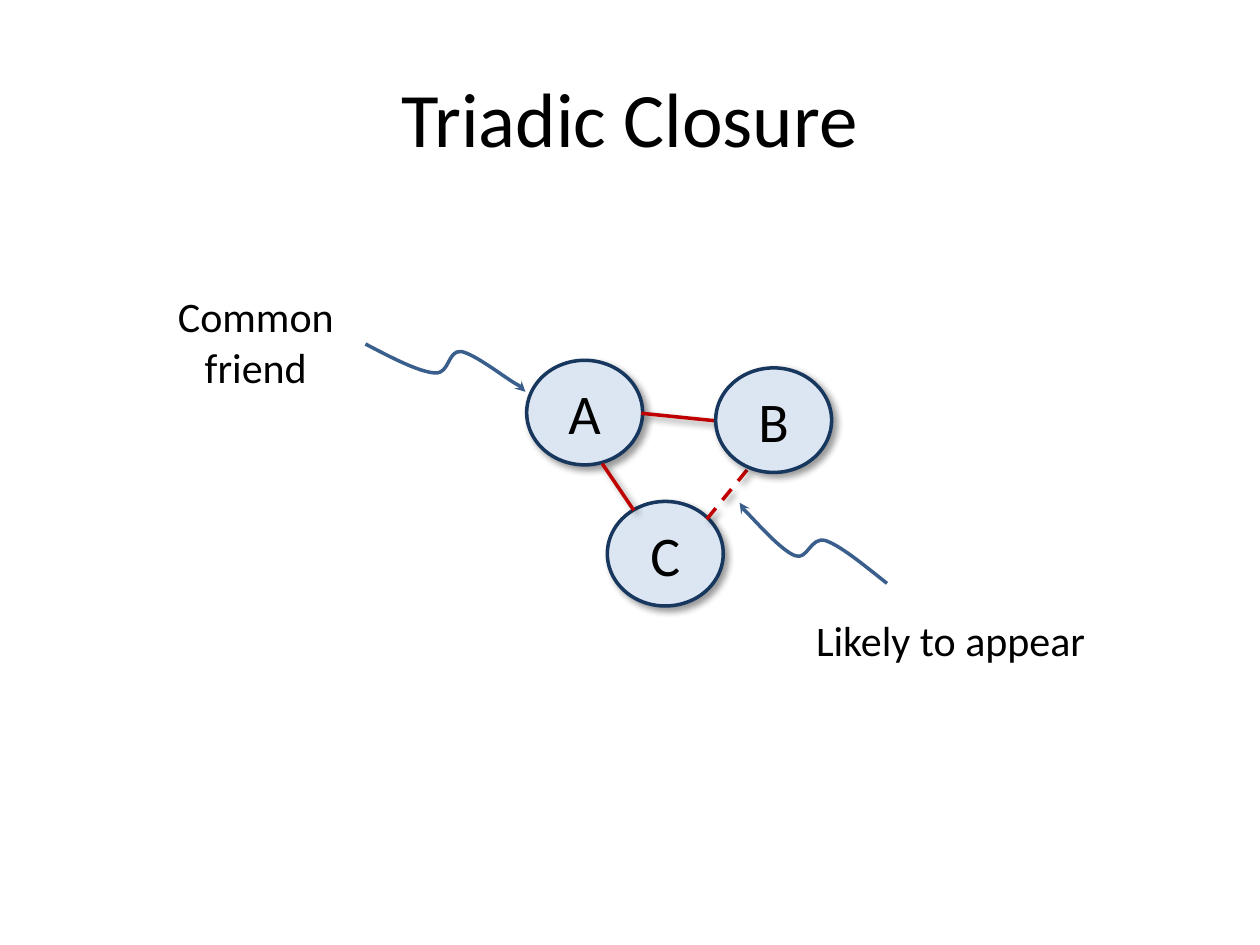
import pptx
import pptx.dml.color
import pptx.enum.dml
import pptx.enum.shapes
import pptx.enum.text
import pptx.oxml
import pptx.oxml.ns
import pptx.util

Inches = pptx.util.Inches
qn = pptx.oxml.ns.qn

SHADE = (
    '<a:effectLst xmlns:a="http://schemas.openxmlformats.org/drawingml/2006/main">'
    '<a:outerShdw blurRad="50800" dist="38100" dir="2700000" algn="tl" rotWithShape="0">'
    '<a:srgbClr val="000000"><a:alpha val="40000"/></a:srgbClr>'
    '</a:outerShdw></a:effectLst>'
)


def tint(code):
    return pptx.dml.color.RGBColor.from_string(code)


class Sketch:
    """Draws labels, nodes, edges and curved arrows on one slide in one style."""

    font, ink, fill, rim = "Calibri", "000000", "DCE6F2", "17375E"
    edge, curl, width = "C00000", "3A5F8C", pptx.util.Pt(2)
    node = (0.92, 0.83)

    def __init__(self, slide):
        self.shapes = slide.shapes

    def letter(self, frame, text, size, middle=True):
        anchor = pptx.enum.text.MSO_ANCHOR
        frame.word_wrap = True
        frame.vertical_anchor = anchor.MIDDLE if middle else anchor.TOP
        para = frame.paragraphs[0]
        para.alignment = pptx.enum.text.PP_ALIGN.CENTER
        for index, part in enumerate(text.split("\n")):
            if index:
                para.add_line_break()
            run = para.add_run()
            run.text = part
            run.font.name = self.font
            run.font.size = pptx.util.Pt(size)
            run.font.color.rgb = tint(self.ink)

    def stroke(self, shape, color):
        shape.line.color.rgb = tint(color)
        shape.line.width = self.width

    def shade(self, shape):
        shape._element.spPr.append(pptx.oxml.parse_xml(SHADE))

    def label(self, text, box, size, middle=False):
        shape = self.shapes.add_textbox(*map(Inches, box))
        self.letter(shape.text_frame, text, size, middle)

    def circle(self, text, left, top):
        oval = pptx.enum.shapes.MSO_SHAPE.OVAL
        shape = self.shapes.add_shape(oval, *map(Inches, (left, top, *self.node)))
        shape.fill.solid()
        shape.fill.fore_color.rgb = tint(self.fill)
        self.stroke(shape, self.rim)
        self.shade(shape)
        self.letter(shape.text_frame, text, 32)

    def link(self, start, end, dashed=False):
        kind = pptx.enum.shapes.MSO_CONNECTOR.STRAIGHT
        line = self.shapes.add_connector(kind, *map(Inches, (*start, *end)))
        self.stroke(line, self.edge)
        if dashed:
            line.line.dash_style = pptx.enum.dml.MSO_LINE.DASH
        self.shade(line)

    def curve(self, points):
        spots = [(Inches(x), Inches(y)) for x, y in points]
        pen = self.shapes.build_freeform(*spots[0])
        pen.add_line_segments(spots[1:], close=False)
        shape = pen.convert_to_shape()
        route = next(shape._element.iter(qn("a:path")))
        steps = route.findall(qn("a:lnTo"))
        for first in range(0, len(steps), 3):
            bend = pptx.oxml.parse_xml(
                '<a:cubicBezTo xmlns:a="http://schemas.openxmlformats.org/drawingml/2006/main"/>')
            for step in steps[first:first + 3]:
                bend.append(step[0])
                route.remove(step)
            route.append(bend)
        shape.fill.background()
        shape.shadow.inherit = False
        self.stroke(shape, self.curl)
        rule = shape._element.spPr.find(qn("a:ln"))
        rule.append(rule.makeelement(qn("a:headEnd"), {"type": "stealth"}))


def main():
    deck = pptx.Presentation()
    deck.slide_width, deck.slide_height = Inches(10), Inches(7.5)
    art = Sketch(deck.slides.add_slide(deck.slide_layouts[6]))

    art.label("Triadic Closure", (0.5, 0.3, 9, 1.25), 44, middle=True)
    art.circle("A", 4.18, 2.86)
    art.circle("C", 4.82, 3.98)
    art.link((5.09, 3.28), (5.68, 3.34))
    art.link((5.03, 4.05), (4.78, 3.68))
    art.link((5.61, 4.12), (5.97, 3.68), dashed=True)
    art.circle("B", 5.68, 2.92)
    art.label("Likely to appear", (6.17, 4.83, 2.75, 0.5), 24)
    art.label("Common\nfriend", (0.97, 2.26, 2.12, 0.91), 24)
    art.curve([(4.17, 3.11), (4.18, 3.11), (4.19, 3.1), (4.1, 3.05),
               (4.01, 3), (3.77, 2.81), (3.66, 2.79),
               (3.55, 2.78), (3.57, 2.97), (3.45, 2.96),
               (3.32, 2.95), (3.11, 2.84), (2.9, 2.73)])
    art.curve([(5.87, 3.99), (5.86, 4), (5.86, 4), (5.93, 4.07),
               (6, 4.14), (6.2, 4.37), (6.31, 4.41),
               (6.41, 4.45), (6.43, 4.26), (6.55, 4.29),
               (6.67, 4.33), (6.85, 4.48), (7.04, 4.63)])
    deck.save("out.pptx")


if __name__ == "__main__":
    main()
